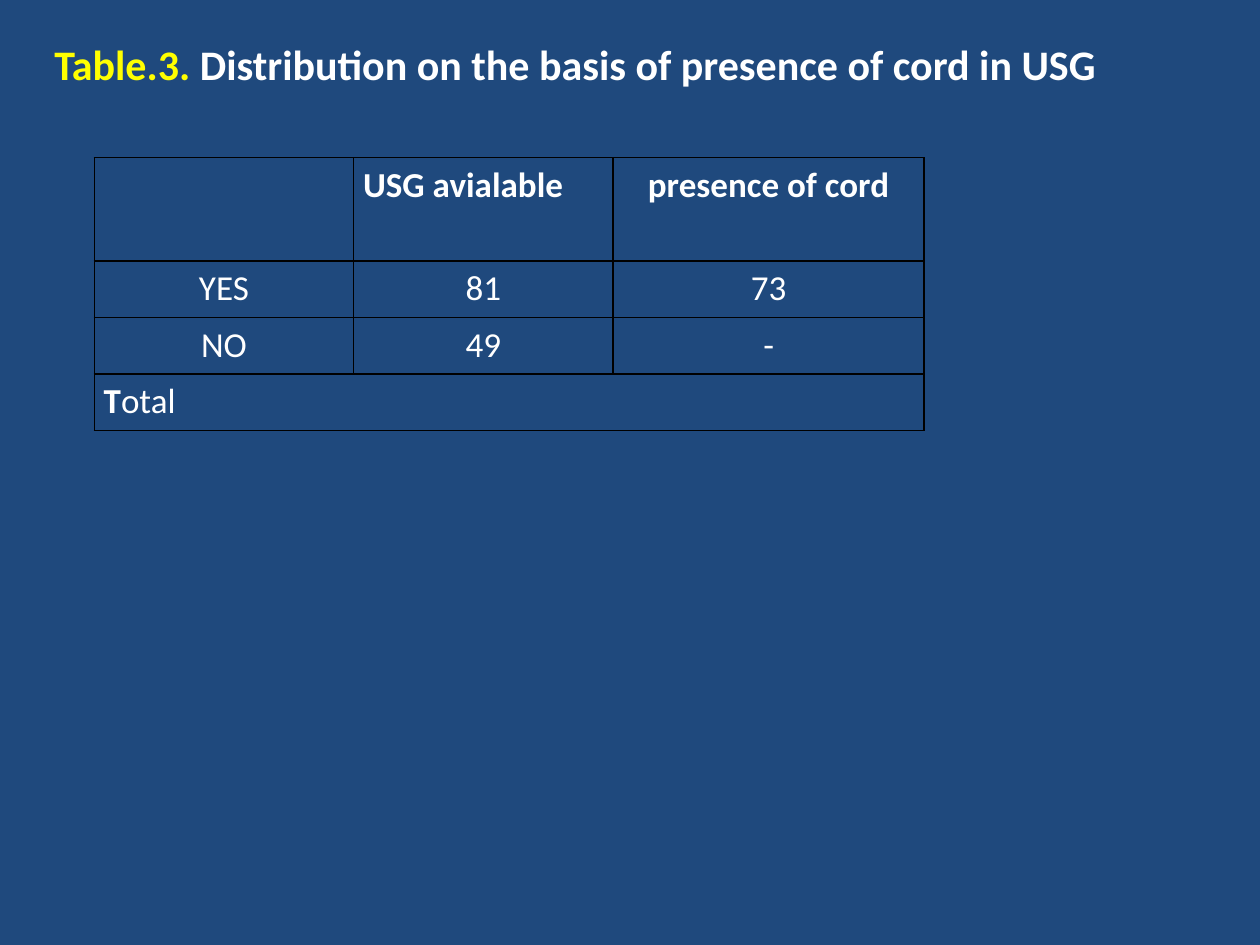
from lxml import etree
from pptx import Presentation
from pptx.dml.color import RGBColor
from pptx.enum.text import MSO_ANCHOR, MSO_AUTO_SIZE, PP_ALIGN
from pptx.oxml.ns import qn
from pptx.util import Cm, Pt

LEFT, CENTER = PP_ALIGN.LEFT, PP_ALIGN.CENTER
TOP = MSO_ANCHOR.TOP
TITLE_ONLY = 5

TITLE = [("Table.3. ", "accent", True),
         ("Distribution on the basis of presence of cord in USG", "text", True)]
ROWS = [
    [([], LEFT), ([("USG avialable", "text", True)], LEFT),
     ([("presence of cord", "text", True)], CENTER)],
    [([(value, "text", False)], CENTER) for value in ("YES", "81", "73")],
    [([(value, "text", False)], CENTER) for value in ("NO", "49", "-")],
    [([("T", "text", True), ("otal", "text", False)], LEFT)],
]

THEME = {
    "font": "Calibri",
    "title_size": Pt(24),
    "table_size": Pt(20),
    "background": "1F497D",
    "accent": "FFFF00",
    "text": "FFFFFF",
    "border": "000000",
    "border_width": Pt(1),
}
TITLE_AT = {"left": Cm(0.84), "top": Cm(0.64), "width": Cm(22.86), "height": Cm(1.27)}
TITLE_FORMAT = {"word_wrap": True, "vertical_anchor": TOP,
                "auto_size": MSO_AUTO_SIZE.SHAPE_TO_FIT_TEXT}
TABLE_LEFT, TABLE_TOP = Cm(1.9), Cm(3.18)
COLUMN_WIDTHS = [Cm(5.23), Cm(5.23), Cm(6.27)]
ROW_HEIGHTS = [Cm(2.08)] + [Cm(1.14)] * 3
TABLE_FORMAT = {"first_row": False, "horz_banding": False}
CELL_FORMAT = {"margin_left": Cm(0.19), "margin_right": Cm(0.19),
               "margin_top": 0, "margin_bottom": 0, "vertical_anchor": TOP}


def apply_format(target, values):
    for name, value in values.items():
        setattr(target, name, value)


def write_spans(para, spans, size, para_format):
    apply_format(para, para_format)
    for text, color, bold in spans:
        span = para.add_run()
        span.text = text
        apply_format(span.font, {"name": THEME["font"], "size": size, "bold": bold})
        span.font.color.rgb = RGBColor.from_string(THEME[color])


def draw_borders(cell):
    properties = cell._tc.get_or_add_tcPr()
    for position, side in enumerate(("a:lnL", "a:lnR", "a:lnT", "a:lnB")):
        line = etree.Element(qn(side), w=str(THEME["border_width"]))
        fill = etree.SubElement(line, qn("a:solidFill"))
        etree.SubElement(fill, qn("a:srgbClr"), val=THEME["border"])
        properties.insert(position, line)


def add_title(page):
    title = page.shapes.title
    apply_format(title, TITLE_AT)
    apply_format(title.text_frame, TITLE_FORMAT)
    write_spans(title.text_frame.paragraphs[0], TITLE, THEME["title_size"],
                {"alignment": LEFT})


def add_results(page):
    table = page.shapes.add_table(len(ROWS), len(COLUMN_WIDTHS), TABLE_LEFT, TABLE_TOP,
                                  sum(COLUMN_WIDTHS), sum(ROW_HEIGHTS)).table
    apply_format(table, TABLE_FORMAT)
    for column, width in zip(table.columns, COLUMN_WIDTHS):
        column.width = width
    for row, height in zip(table.rows, ROW_HEIGHTS):
        row.height = height
    for cell in table.iter_cells():
        apply_format(cell, CELL_FORMAT)
        cell.fill.background()
        draw_borders(cell)
    for row_index, row in enumerate(ROWS):
        for column_index, (spans, alignment) in enumerate(row):
            para = table.cell(row_index, column_index).text_frame.paragraphs[0]
            write_spans(para, spans, THEME["table_size"],
                        {"alignment": alignment, "line_spacing": 1.15})
    last = len(ROWS) - 1
    table.cell(last, 0).merge(table.cell(last, len(COLUMN_WIDTHS) - 1))


def main():
    deck = Presentation()
    apply_format(deck, {"slide_width": Cm(25.4), "slide_height": Cm(19.05)})
    page = deck.slides.add_slide(deck.slide_layouts[TITLE_ONLY])
    page.background.fill.solid()
    page.background.fill.fore_color.rgb = RGBColor.from_string(THEME["background"])
    add_title(page)
    add_results(page)
    deck.save("out.pptx")


if __name__ == "__main__":
    main()
